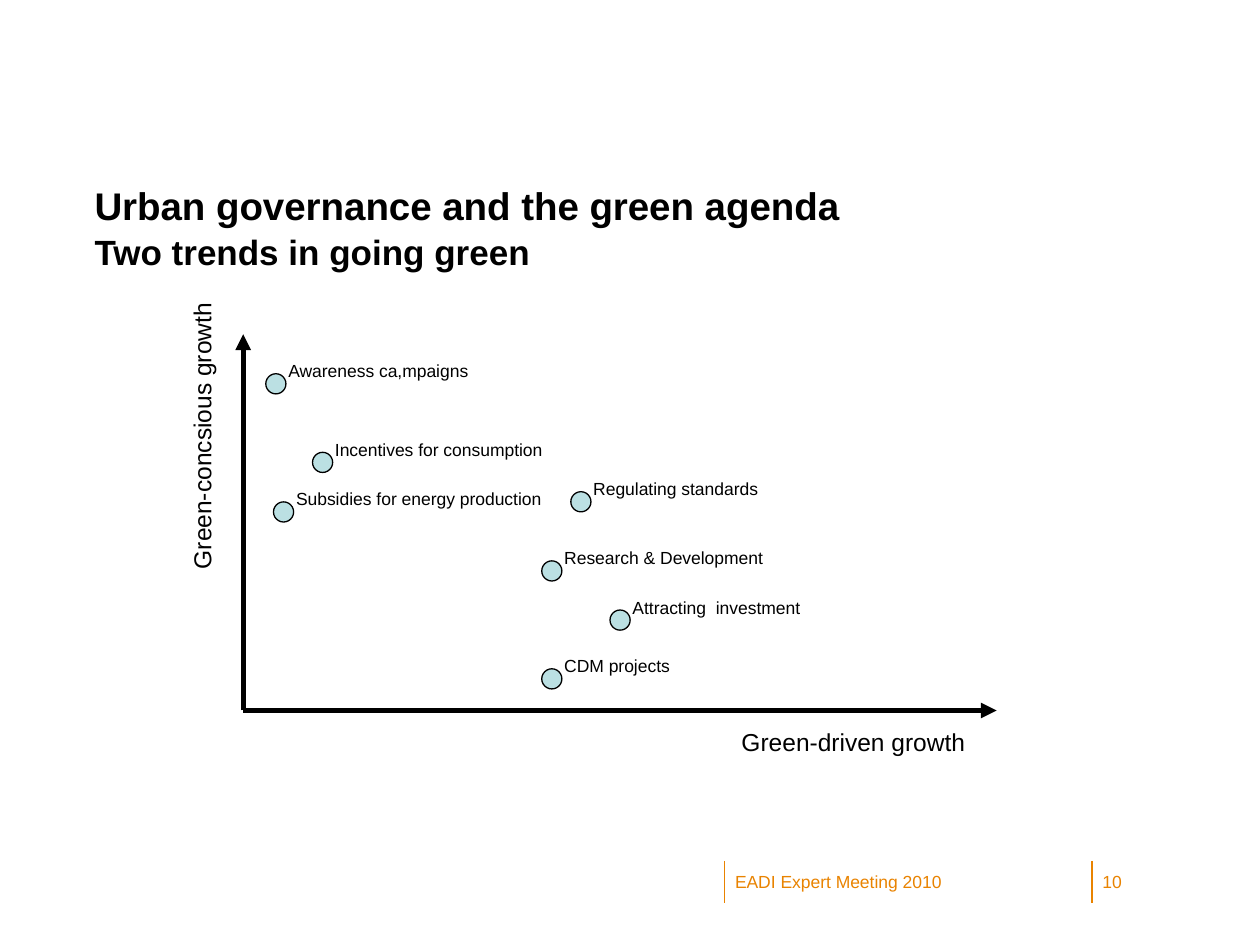
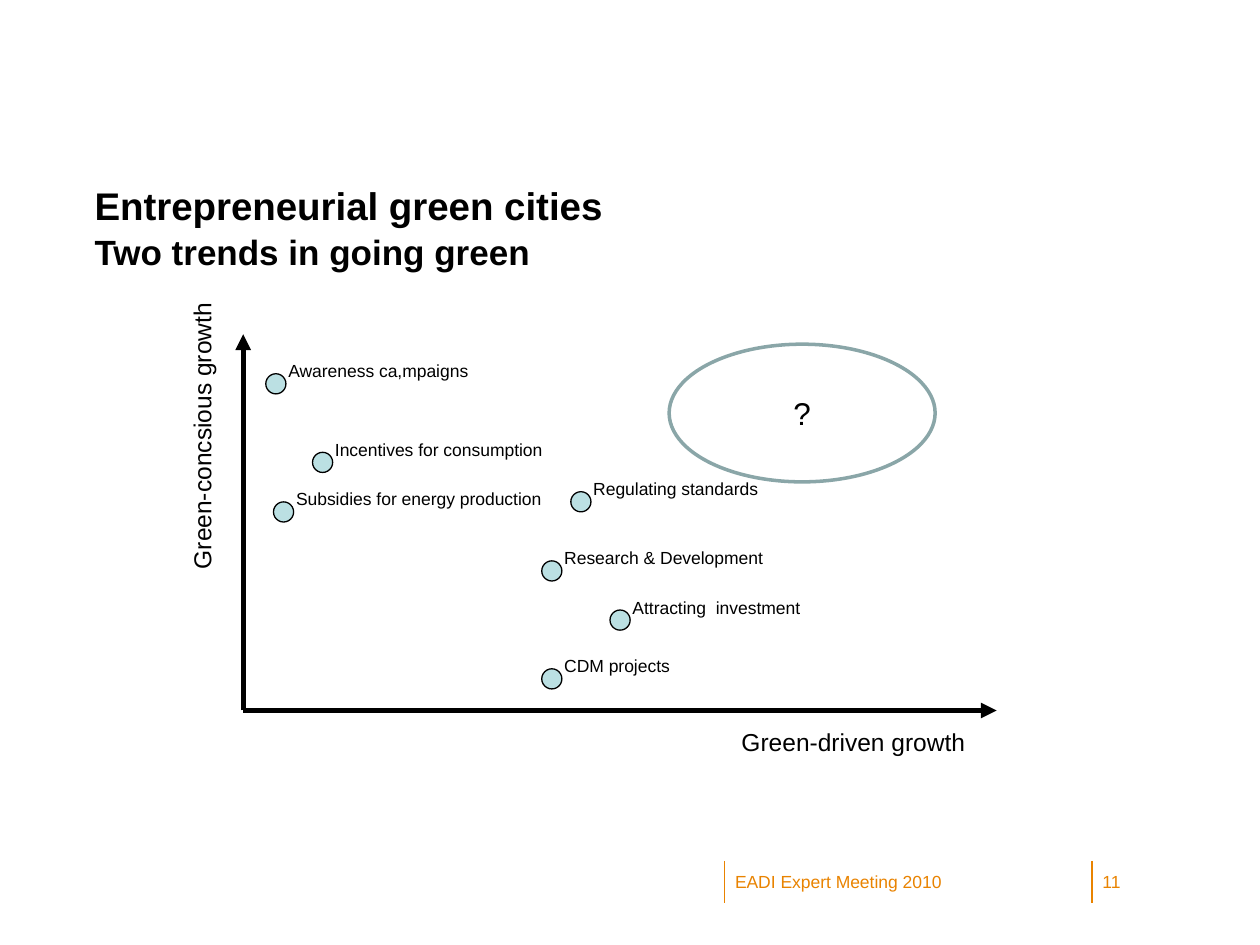
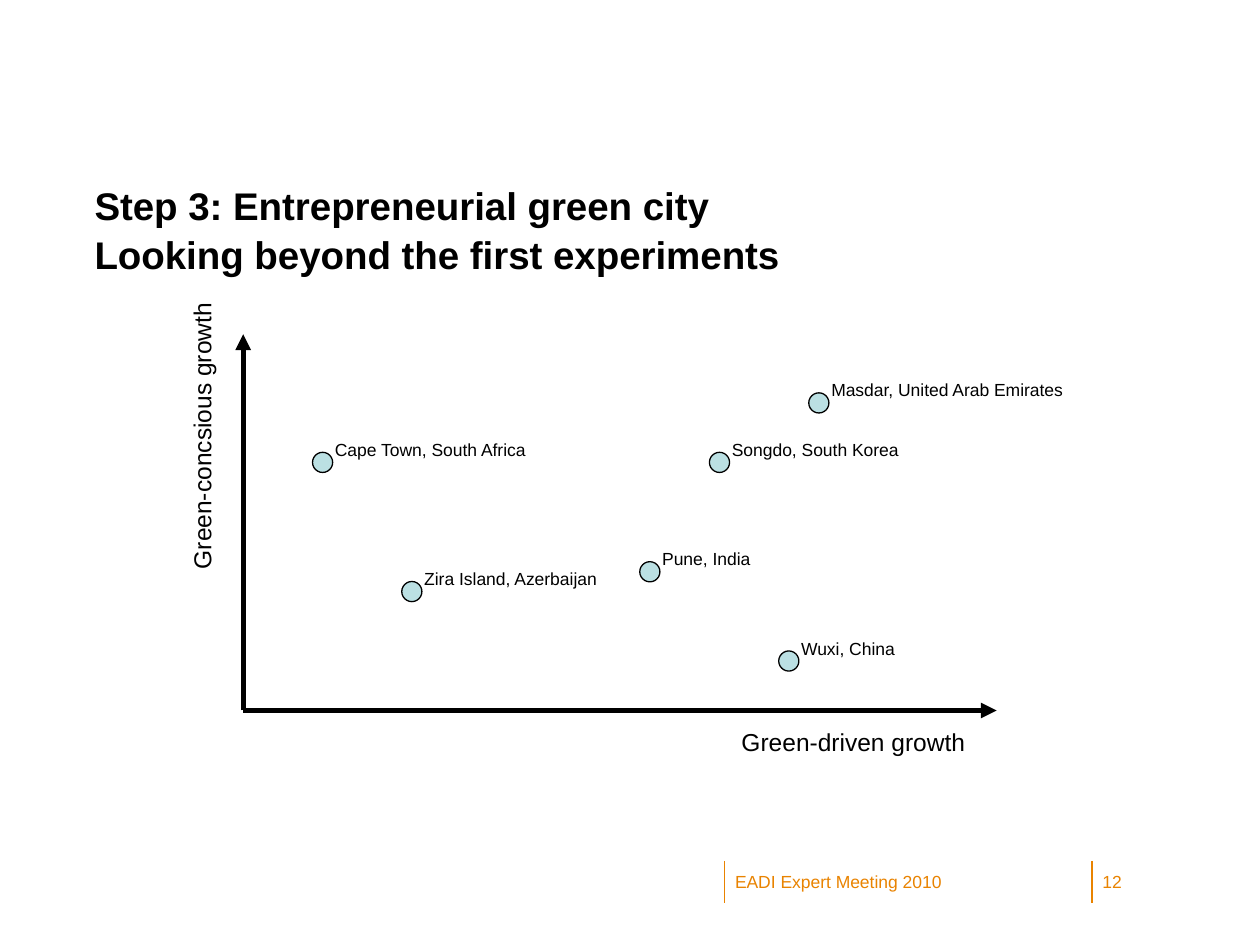
from lxml import etree
from pptx import Presentation
from pptx.dml.color import RGBColor
from pptx.enum import shapes, text
from pptx.oxml import ns
from pptx.util import Pt

COLORS = {"black": "000000", "orange": "E98300", "dot": "BBE0E3", "ring": "8AA6A8"}
FONT = "Arial"
DOT = 11.5
LABEL_RISE = 11.2
ORIGIN = (139, 406)

trends = [
    ("Incentives for consumption", 178.6, 258.5, 136),
    ("Awareness ca,mpaigns", 151.9, 213.6, 136),
    ("CDM projects", 309.6, 382.2, 136),
    ("Attracting  investment", 348.6, 348.6, 136),
    ("Research & Development", 309.6, 320.5, 136),
    ("Subsidies for energy production", 156.3, 286.8, 170),
    ("Regulating standards", 326.2, 281, 136),
]
cities = [
    ("Songdo, South Korea", 405.4, 258.5, 136),
    ("Masdar, United Arab Emirates", 462.2, 224.5, 158),
    ("Cape Town, South Africa", 178.6, 258.5, 136),
    ("Zira Island, Azerbaijan", 229.6, 332.3, 136),
    ("Wuxi, China", 445, 372, 136),
    ("Pune, India", 365.6, 321, 136),
]
pages = [
    (10, "Urban governance and the green agenda", "Two trends in going green", 20, trends),
    (11, "Entrepreneurial green cities", "Two trends in going green", 20, trends),
    (12, "Step 3: Entrepreneurial green city", "Looking beyond the first experiments", 22, cities),
]


def add_text(slide, words, left, top, width, height, size, color="black", inset=True):
    box = slide.shapes.add_textbox(Pt(left), Pt(top), Pt(width), Pt(height))
    frame = box.text_frame
    frame.word_wrap = True
    if not inset:
        frame.margin_left = frame.margin_right = frame.margin_top = frame.margin_bottom = 0
    paragraph = frame.paragraphs[0]
    paragraph.text = words
    paragraph.font.name = FONT
    paragraph.font.size = Pt(size)
    paragraph.font.color.rgb = RGBColor.from_string(COLORS[color])
    return box


def add_line(slide, start, end, color, width, arrow=False):
    line = slide.shapes.add_connector(
        shapes.MSO_CONNECTOR.STRAIGHT, Pt(start[0]), Pt(start[1]), Pt(end[0]), Pt(end[1])
    )
    line.line.color.rgb = RGBColor.from_string(COLORS[color])
    line.line.width = Pt(width)
    if arrow:
        etree.SubElement(line.line._get_or_add_ln(), ns.qn("a:tailEnd"), type="triangle")
    etree.SubElement(line._element.spPr, ns.qn("a:effectLst"))


presentation = Presentation()
presentation.slide_width = Pt(720)
presentation.slide_height = Pt(540)

for number, title, subtitle, subtitle_size, points in pages:
    slide = presentation.slides.add_slide(presentation.slide_layouts[6])

    for left, words, width in ((414, "EADI Expert Meeting 2010", 192), (624, str(number), 42)):
        add_line(slide, (left, 492), (left, 516), "orange", 0.75)
        add_text(slide, words, left + 6, 498, width, 24, 10, "orange", inset=False)

    heading = add_text(slide, title, 54, 102, 600, 66, 22, inset=False)
    paragraph = heading.text_frame.paragraphs[0]
    paragraph.line_spacing = 1.07
    paragraph.font.bold = True
    paragraph.add_line_break()
    run = paragraph.add_run()
    run.text = subtitle
    run.font.size = Pt(subtitle_size)

    add_line(slide, ORIGIN, (ORIGIN[0], 191), "black", 3, arrow=True)
    add_line(slide, ORIGIN, (569.5, ORIGIN[1]), "black", 3, arrow=True)
    vertical_label = add_text(slide, "Green-concsious growth", 30.2, 235.4, 170, 24, 14)
    vertical_label.rotation = 270
    add_text(slide, "Green-driven growth", 416.6, 412, 193, 24, 14)

    for words, left, top, width in points:
        dot = slide.shapes.add_shape(
            shapes.MSO_SHAPE.OVAL, Pt(left), Pt(top), Pt(DOT), Pt(DOT)
        )
        dot.shadow.inherit = False
        dot.fill.solid()
        dot.fill.fore_color.rgb = RGBColor.from_string(COLORS["dot"])
        dot.line.color.rgb = RGBColor.from_string(COLORS["black"])
        dot.line.width = Pt(0.75)
        add_text(slide, words, left + DOT / 2, top - LABEL_RISE, width, 19.4, 10)

    if number == 11:
        ring = slide.shapes.add_shape(
            shapes.MSO_SHAPE.OVAL, Pt(382.4), Pt(196.7), Pt(152), Pt(78.7)
        )
        ring.shadow.inherit = False
        ring.fill.background()
        ring.line.color.rgb = RGBColor.from_string(COLORS["ring"])
        ring.line.width = Pt(2)
        ring.text_frame.vertical_anchor = text.MSO_ANCHOR.MIDDLE
        paragraph = ring.text_frame.paragraphs[0]
        paragraph.text = "?"
        paragraph.alignment = text.PP_ALIGN.CENTER
        paragraph.font.name = FONT
        paragraph.font.size = Pt(18)
        paragraph.font.color.rgb = RGBColor.from_string(COLORS["black"])

presentation.save("out.pptx")
